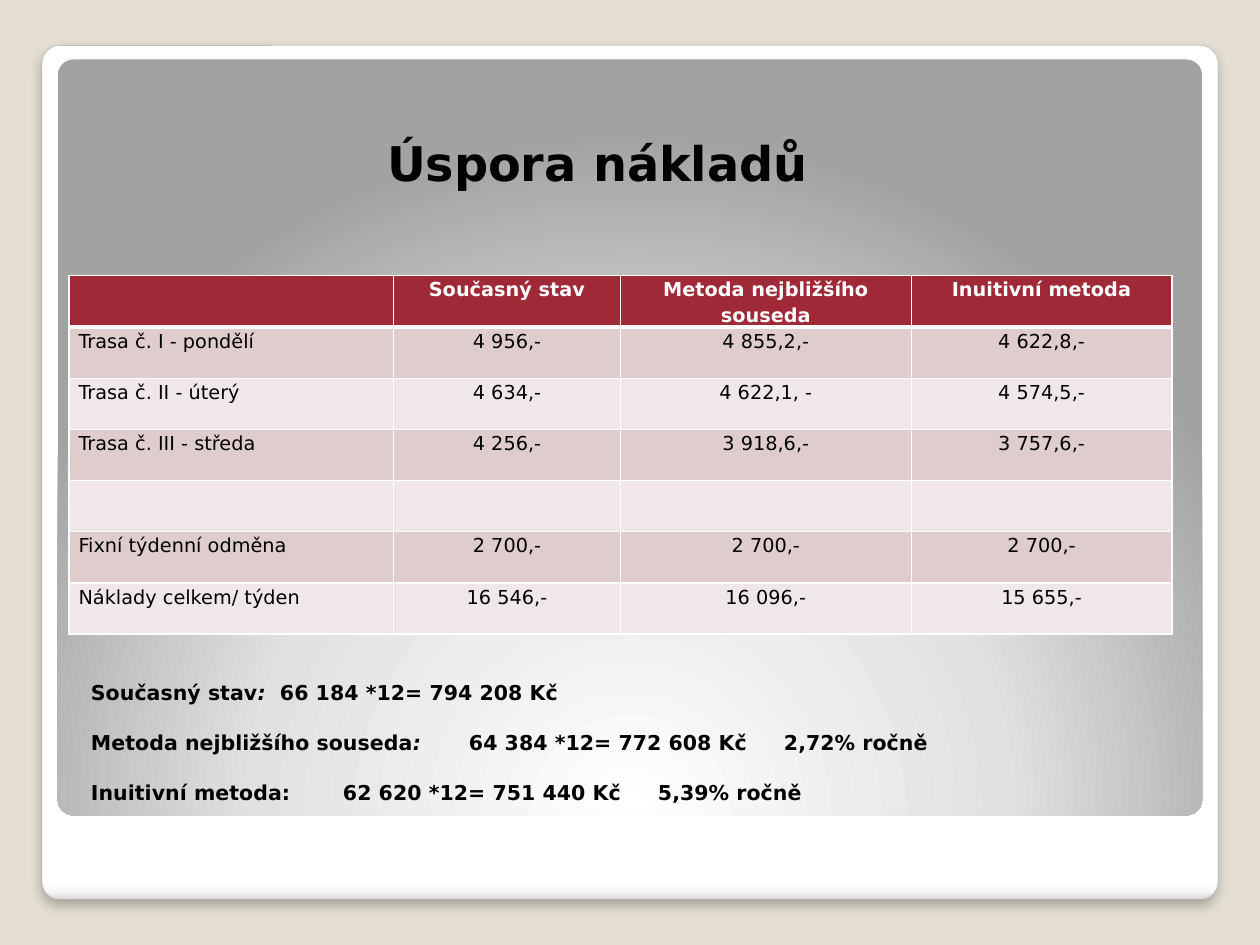
import pptx
import pptx.dml.color
import pptx.enum.shapes
import pptx.enum.text
import pptx.util
from lxml import etree
from pptx.util import Pt

COLORS = {
    "backdrop": "E3DED1", "white": "FFFFFF", "text": "000000", "outline": "A4A4A4",
    "header": "9F2936", "odd": "DFCDCE", "even": "F0E8E8",
}
ANCHOR = pptx.enum.text.MSO_ANCHOR
ALIGN = pptx.enum.text.PP_ALIGN
NS = "http://schemas.openxmlformats.org/drawingml/2006/main"

HEADERS = ["", "Současný stav", "Metoda nejbližšího souseda", "Inuitivní metoda"]
COSTS = [
    ["Trasa č. I - pondělí", "4\u00a0956,-", "4 855,2,-", "4 622,8,-"],
    ["Trasa č. II - úterý", "4\u00a0634,-", "4 622,1, -", "4 574,5,-"],
    ["Trasa č. III - středa", "4\u00a0256,-", "3 918,6,-", "3 757,6,-"],
    ["", "", "", ""],
    ["Fixní týdenní odměna", "2 700,-", "2\u00a0700,-", "2\u00a0700,-"],
    ["Náklady celkem/ týden", "16 546,-", "16 096,-", "15 655,-"],
]
# Each line: method, colon in italics or not, yearly cost with the saving
SAVINGS = [
    ("Současný stav", True, "\t66\u00a0184 *12= 794\u00a0208 Kč"),
    ("Metoda nejbližšího souseda", True, "\t64 384 *12= 772\u00a0608 Kč\t2,72% ročně"),
    ("Inuitivní metoda", False, "\t62\u00a0620 *12= 751\u00a0440 Kč\t5,39% ročně"),
]


def rgb(name):
    return pptx.dml.color.RGBColor.from_string(COLORS[name])


def xml(markup):
    """Parse one element whose prefix a: is DrawingML."""
    tag, rest = markup.split(">", 1)
    closing = "/" if tag.endswith("/") else ""
    return etree.fromstring(f'{tag.rstrip("/")} xmlns:a="{NS}"{closing}>{rest}')


class CostSlide:
    font_name = "DejaVu Sans"

    def __init__(self, presentation):
        self.slide = presentation.slides.add_slide(presentation.slide_layouts[1])
        background = self.slide.background.fill
        background.solid()
        background.fore_color.rgb = rgb("backdrop")

    def style(self, paragraph, size, color="text", bold=False):
        font = paragraph.font
        font.name, font.size, font.bold = self.font_name, Pt(size), bold
        font.color.rgb = rgb(color)

    def panel(self, box, stops, direction):
        """Add a rounded panel with a gradient of (percent, hex) stops."""
        panel = self.slide.shapes.add_shape(
            pptx.enum.shapes.MSO_SHAPE.ROUNDED_RECTANGLE, *map(Pt, box))
        panel.adjustments[0] = 0.021
        panel.shadow.inherit = False
        panel.line.fill.background()
        marks = "".join(f'<a:gs pos="{pos * 1000}"><a:srgbClr val="{color}"/></a:gs>'
                        for pos, color in stops)
        panel._element.spPr.insert(
            2, xml(f"<a:gradFill><a:gsLst>{marks}</a:gsLst>{direction}</a:gradFill>"))
        return panel

    def raise_panel(self, panel):
        """Give a panel its thin outline and the soft shadow below."""
        panel.line.color.rgb = rgb("outline")
        panel.line.width = Pt(0.16)
        effects = panel._element.spPr.find(f"{{{NS}}}effectLst")
        effects.append(xml(
            f'<a:outerShdw blurRad="{Pt(6)}" dist="{Pt(4)}" dir="5400000" rotWithShape="0">'
            '<a:srgbClr val="000000"><a:alpha val="25000"/></a:srgbClr></a:outerShdw>'))

    def placeholder(self, index, box, anchor):
        """Place a placeholder in front of what is drawn so far."""
        holder = self.slide.placeholders[index]
        holder.left, holder.top, holder.width, holder.height = map(Pt, box)
        holder._element.getparent().append(holder._element)
        frame = holder.text_frame
        frame.word_wrap = True
        frame.auto_size = pptx.enum.text.MSO_AUTO_SIZE.NONE
        frame.vertical_anchor = anchor
        return frame

    def title(self, text, box):
        heading = self.placeholder(0, box, ANCHOR.BOTTOM).paragraphs[0]
        heading.text = text
        heading.alignment = ALIGN.LEFT
        self.style(heading, 27.3, bold=True)

    def savings(self, lines, box, tab_stops):
        frame = self.placeholder(1, box, ANCHOR.TOP)
        tabs = "".join(f'<a:tab pos="{Pt(stop)}" algn="l"/>' for stop in tab_stops)
        for number, (method, italic_colon, result) in enumerate(lines):
            line = frame.add_paragraph() if number else frame.paragraphs[0]
            for part in (method, ":", result):
                run = line.add_run()
                run.text = part
                if part == ":" and italic_colon:
                    run.font.italic = True
            line.space_before = Pt(14.4 if number else 0)
            properties = line._p.get_or_add_pPr()
            properties.set("marL", "0")
            properties.set("indent", "0")
            properties.append(xml("<a:buNone/>"))
            properties.append(xml(f"<a:tabLst>{tabs}</a:tabLst>"))
            self.style(line, 11.7, bold=True)

    def table(self, rows, left, top, widths, row_height):
        table = self.slide.shapes.add_table(
            len(rows), len(widths), Pt(left), Pt(top),
            Pt(sum(widths)), Pt(row_height * len(rows))).table
        for column, width in zip(table.columns, widths):
            column.width = Pt(width)
        for r, values in enumerate(rows):
            table.rows[r].height = Pt(row_height)
            for c, value in enumerate(values):
                self.cell(table.cell(r, c), value, r, c)

    def cell(self, cell, value, row, column):
        header = row == 0
        cell.margin_left = cell.margin_right = Pt(5.4)
        cell.margin_top = cell.margin_bottom = 0
        cell.fill.solid()
        cell.fill.fore_color.rgb = rgb("header" if header else "odd" if row % 2 else "even")
        paragraph = cell.text_frame.paragraphs[0]
        paragraph.text = value
        paragraph.line_spacing = 1.15
        paragraph.alignment = ALIGN.CENTER if header or column else ALIGN.LEFT
        self.style(paragraph, 11, "white" if header else "text", header)
        for position, side in enumerate("LRTB"):
            thick = (header and side == "B") or (row == 1 and side == "T")
            cell._tc.get_or_add_tcPr().insert(position, xml(
                f'<a:ln{side} w="{Pt(3 if thick else 1)}"><a:solidFill>'
                f'<a:srgbClr val="{COLORS["white"]}"/></a:solidFill></a:ln{side}>'))


def main():
    presentation = pptx.Presentation()
    presentation.slide_width, presentation.slide_height = Pt(720), Pt(540)
    slide = CostSlide(presentation)

    card = slide.panel(
        (24, 26, 672, 488),
        [(0, "FFFFFF"), (98, "FFFFFF"), (99, "F7F7F7"), (100, "DADADA")],
        '<a:lin ang="5400000" scaled="0"/>')
    slide.raise_panel(card)
    slide.panel(
        (33, 34, 654, 432), [(0, "FFFFFF"), (55, "E1E1E1"), (100, "A2A2A2")],
        '<a:path path="circle">'
        '<a:fillToRect l="50000" t="175000" r="50000" b="-75000"/></a:path>')

    slide.savings(SAVINGS, (44.8, 385, 644, 77), (216, 391.4))
    slide.table([HEADERS] + COSTS, 39.5, 157.4, (185.5, 129.5, 166.3, 148.9), 29.25)
    slide.title("Úspora nákladů", (214, 39.6, 332, 73.4))
    presentation.save("out.pptx")


if __name__ == "__main__":
    main()
